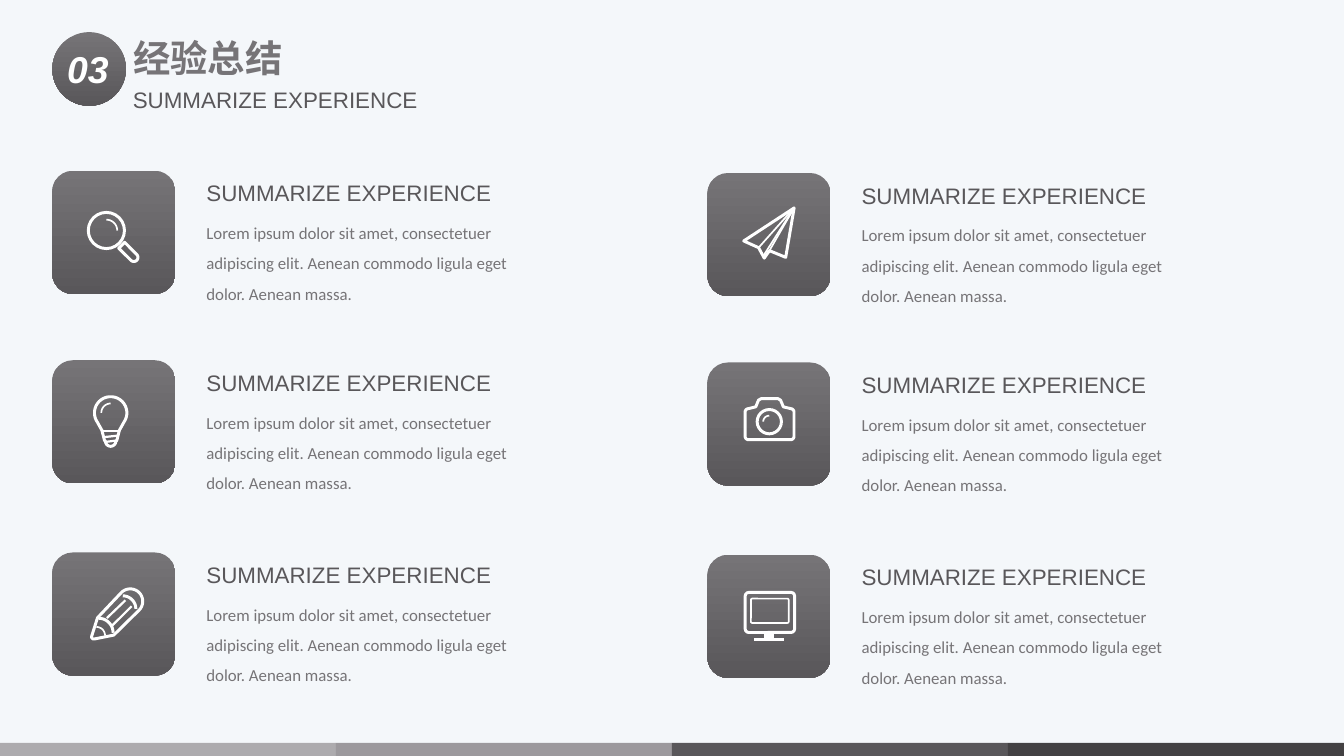
import math

from lxml import etree
from pptx import Presentation
from pptx.dml import color
from pptx.enum import shapes, text
from pptx.oxml import ns
from pptx.util import Pt

WHITE, GREY, DARK = "FFFFFF", "767477", "59575A"
HEADING = "SUMMARIZE EXPERIENCE"
BODY = ("Lorem ipsum dolor sit amet, consectetuer adipiscing elit. "
        "Aenean commodo ligula eget dolor. Aenean massa.")
BAR_COLOURS = ["ADABAE", "9C999D", DARK, "434143"]
COLUMN_LEFTS = [28, 379]
ROW_TOPS = [91.5, 193, 296]
RIGHT_DROP = 1.2
THICK, THIN = 1.6, 0.9


def rgb(value):
    """Turn a hex string into a colour."""
    return color.RGBColor.from_string(value)


def points(*values):
    """Turn numbers of points into lengths."""
    return [Pt(value) for value in values]


def shade(fill, start=GREY, end=DARK, angle=270):
    """Give a fill a two-colour gradient."""
    fill.gradient()
    fill.gradient_angle = angle
    for stop, value in zip(fill.gradient_stops, (start, end)):
        stop.color.rgb = rgb(value)


def add_preset(slide, kind, box):
    """Add a preset shape without line or shadow."""
    shape = slide.shapes.add_shape(kind, *points(*box))
    shape.shadow.inherit = False
    shape.line.fill.background()
    return shape


def write(shape, words, size, font, colour=None, wrap=True, spacing=None,
          align=text.PP_ALIGN.LEFT, **style):
    """Put one formatted paragraph into a shape and return its run."""
    frame = shape.text_frame
    settings = {"word_wrap": wrap, "vertical_anchor": text.MSO_ANCHOR.TOP,
                "auto_size": text.MSO_AUTO_SIZE.SHAPE_TO_FIT_TEXT}
    para = frame.paragraphs[0]
    span = para.add_run()
    span.text = words
    for target, values in (
            (frame, settings),
            (para, {"alignment": align, "line_spacing": spacing}),
            (span.font, {"size": Pt(size), "name": font, **style})):
        for name, value in values.items():
            setattr(target, name, value)
    if colour:
        span.font.color.rgb = rgb(colour)
    return span


def add_text(slide, box, *content, **style):
    """Add a text box with one paragraph."""
    write(slide.shapes.add_textbox(*points(*box)), *content, **style)


def arc(x, y, radius, start, end):
    """List points along an arc, with angles clockwise from the right."""
    steps = max(6, abs(end - start) // 10)
    angles = [math.radians(start + (end - start) * i / steps) for i in range(steps + 1)]
    return [(x + radius * math.cos(a), y + radius * math.sin(a)) for a in angles]


class Pen:
    """Draws white strokes relative to the corner of a tile."""

    def __init__(self, slide, left, top):
        """Keep the slide and the corner."""
        self.slide, self.left, self.top = slide, left, top

    def ink(self, shape, width):
        """Leave a shape unfilled with a white outline."""
        shape.shadow.inherit = False
        shape.fill.background()
        shape.line.color.rgb = rgb(WHITE)
        shape.line.width = Pt(width)

    def line(self, start, end, width=THIN):
        """Draw a straight line."""
        ends = [self.left + start[0], self.top + start[1],
                self.left + end[0], self.top + end[1]]
        line = self.slide.shapes.add_connector(shapes.MSO_CONNECTOR.STRAIGHT, *points(*ends))
        line.line.color.rgb = rgb(WHITE)
        line.line.width = Pt(width)
        etree.SubElement(line._element.spPr, ns.qn("a:effectLst"))

    def curve(self, places, width=THIN, close=False):
        """Draw an outline through the given places."""
        corners = [points(self.left + x, self.top + y) for x, y in places]
        builder = self.slide.shapes.build_freeform(*corners[0])
        builder.add_line_segments(corners[1:], close=close)
        self.ink(builder.convert_to_shape(), width)

    def circle(self, x, y, radius):
        """Draw a thick circle."""
        box = self.left + x - radius, self.top + y - radius, 2 * radius, 2 * radius
        self.ink(add_preset(self.slide, shapes.MSO_SHAPE.OVAL, box), THICK)

    def frame(self, box, width, rounding):
        """Draw a rounded frame."""
        x, y, wide, high = box
        box = self.left + x, self.top + y, wide, high
        shape = add_preset(self.slide, shapes.MSO_SHAPE.ROUNDED_RECTANGLE, box)
        shape.adjustments[0] = rounding
        self.ink(shape, width)


def draw_magnifier(pen):
    """Draw a magnifying glass."""
    pen.circle(29, 32, 9.7)
    pen.curve(arc(29, 32, 5.8, -90, 0))
    pen.curve([(35.6, 41.5), *arc(43.7, 46.4, 2.2, 135, -45), (38.8, 38.3)], THICK, True)


def draw_plane(pen):
    """Draw a paper plane."""
    nose, fold, keel = (46.4, 18.7), (27.4, 40), (33.2, 41.6)
    pen.curve([nose, (19.4, 36.4), fold, (30.4, 45.6), keel, (41.9, 45.2)], THICK, True)
    for end in (fold, (30.2, 44), keel):
        pen.line(nose, end)


def draw_bulb(pen):
    """Draw a light bulb."""
    pen.curve([*arc(31.3, 28.2, 8.7, 145, 395), (36, 37.5), (34.6, 43),
               *arc(31.3, 43.3, 2.8, 0, 180), (28, 43), (26.6, 37.5)], THICK, True)
    pen.curve(arc(31.3, 28.2, 5, 180, 270))
    for start, end in (((26.8, 38), (35.8, 38)), ((27.5, 41.2), (35.2, 40.4)),
                       ((28.3, 43.8), (34.5, 43))):
        pen.line(start, end, 1.2)


def draw_camera(pen):
    """Draw a camera."""
    pen.curve([*arc(22, 39.6, 1.8, 90, 180), *arc(22, 26.6, 1.8, 180, 260),
               (25.9, 23.8), (27.4, 20.2), (28.8, 19.4), (37.8, 19.4), (39.2, 20.2),
               (40.7, 23.8), *arc(44.6, 26.6, 1.8, -80, 0),
               *arc(44.6, 39.6, 1.8, 0, 90)], THICK, True)
    pen.circle(33.1, 31.7, 6.5)
    pen.curve(arc(33.1, 31.7, 3.2, 180, 270))


def draw_pencil(pen):
    """Draw a pencil."""
    pen.curve([(24.3, 35), *arc(41.8, 26.2, 6.7, 225, 405), (33, 44.3),
               *arc(22.3, 45.2, 1.2, 80, 190)], THICK, True)
    pen.curve(arc(37.8, 30.2, 7, -90, 0), THICK)
    pen.curve(arc(24.8, 43, 7.8, -90, 0), THICK)
    pen.curve(arc(23.7, 44.5, 4.6, -90, 0))
    pen.line((29.3, 35.1), (39.2, 25.6), 1.2)
    pen.line((32, 39.3), (42.5, 28.8), 1.2)


def draw_monitor(pen):
    """Draw a computer monitor."""
    pen.frame((20.2, 20.2, 26.5, 21.5), THICK, 0.09)
    pen.frame((23.3, 23.5, 20.2, 13), THIN, 0.05)
    pen.line((33.1, 42), (33.1, 45), 5.5)
    pen.line((25, 45.3), (41.2, 45.3), 1.8)


def add_bars(slide, left, top, width, height):
    """Fill a strip with equal coloured bars."""
    step = width / len(BAR_COLOURS)
    for index, value in enumerate(BAR_COLOURS):
        box = left + index * step, top, step, height
        bar = add_preset(slide, shapes.MSO_SHAPE.RECTANGLE, box)
        bar.fill.solid()
        bar.fill.fore_color.rgb = rgb(value)


def add_header(slide, left, top):
    """Add the numbered badge, the title and the subtitle."""
    shade(add_preset(slide, shapes.MSO_SHAPE.OVAL, (left, top, 39.5, 39.5)).fill)
    add_text(slide, (left - 7.5, top + 3.8, 53.3, 31.5), "03", 20, "Arial", WHITE,
             align=text.PP_ALIGN.CENTER, bold=True, italic=True)
    title = slide.shapes.title
    box = points(left + 36.1, top - 2, 175, 31.5)
    for name, value in zip(("left", "top", "width", "height"), box):
        setattr(title, name, value)
    font = "Noto Sans CJK SC"
    span = write(title, "经验总结", 20, font, bold=True)
    shade(span.font.fill)
    etree.SubElement(span.font._element, ns.qn("a:ea"), typeface=font)
    add_text(slide, (left + 36.1, top + 25.5, 225, 21.6), HEADING, 12, "Arial", DARK)


def add_item(slide, left, top, draw_icon):
    """Add a tile with its icon, heading and description."""
    shade(add_preset(slide, shapes.MSO_SHAPE.ROUNDED_RECTANGLE, (left, top, 66, 66)).fill)
    add_text(slide, (left + 75.5, top + 18.9, 186, 56), BODY, 9, "Calibri", GREY, spacing=1.5)
    add_text(slide, (left + 75.5, top + 1.2, 168.5, 21.6), HEADING, 12, "Arial", DARK,
             wrap=False)
    draw_icon(Pen(slide, left, top))


def main():
    """Build and save the deck."""
    deck = Presentation()
    deck.slide_width, deck.slide_height = points(720, 405)
    page = deck.slides.add_slide(deck.slide_layouts[5])
    shade(page.background.fill, "F4F7FA", "F2F6F9", 135)
    add_bars(page, 0, 398, 720, 7)
    add_header(page, 28, 17.2)
    icons = iter([draw_magnifier, draw_plane, draw_bulb,
                  draw_camera, draw_pencil, draw_monitor])
    for top in ROW_TOPS:
        for column, left in enumerate(COLUMN_LEFTS):
            add_item(page, left, top + column * RIGHT_DROP, next(icons))
    deck.save("out.pptx")


if __name__ == "__main__":
    main()
